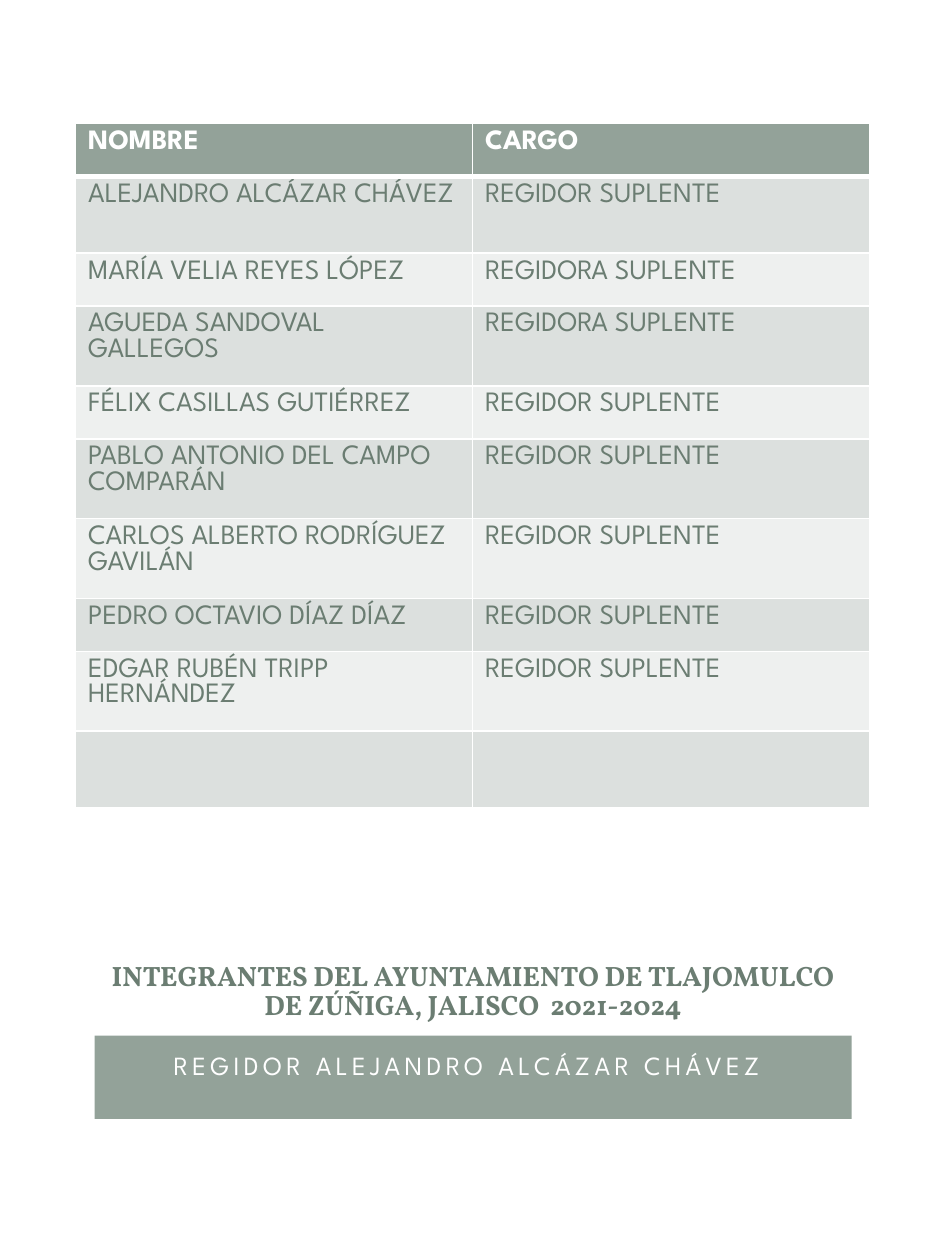
from dataclasses import dataclass

from lxml.etree import SubElement
from pptx import Presentation
from pptx.dml.color import RGBColor
from pptx.enum.shapes import MSO_SHAPE
from pptx.enum.text import MSO_ANCHOR, PP_ALIGN
from pptx.oxml.ns import qn
from pptx.util import Inches, Pt

WHITE = RGBColor(0xFF, 0xFF, 0xFF)
SAGE = RGBColor(0x93, 0xA2, 0x99)
DARK_SAGE = RGBColor(0x6B, 0x7D, 0x72)
BANDS = (RGBColor(0xDC, 0xE0, 0xDE), RGBColor(0xEE, 0xF0, 0xEF))
SANS = "League Spartan"
SERIF = "Vollkorn"


@dataclass
class Member:
    name: str
    role: str
    height: float


MEMBERS = [
    Member("ALEJANDRO ALCÁZAR CHÁVEZ", "REGIDOR SUPLENTE", 0.61),
    Member("MARÍA VELIA REYES LÓPEZ", "REGIDORA SUPLENTE", 0.42),
    Member("AGUEDA SANDOVAL GALLEGOS", "REGIDORA SUPLENTE", 0.61),
    Member("FÉLIX CASILLAS GUTIÉRREZ", "REGIDOR SUPLENTE", 0.42),
    Member("PABLO ANTONIO DEL CAMPO COMPARÁN", "REGIDOR SUPLENTE", 0.61),
    Member("CARLOS ALBERTO RODRÍGUEZ GAVILÁN", "REGIDOR SUPLENTE", 0.42),
    Member("PEDRO OCTAVIO DÍAZ DÍAZ", "REGIDOR SUPLENTE", 0.42),
    Member("EDGAR RUBÉN TRIPP HERNÁNDEZ", "REGIDOR SUPLENTE", 0.61),
    Member("", "", 0.61),
]


def style(para, face: str, size: float, color: RGBColor, bold: bool = False) -> None:
    font = para.font
    font.name, font.size, font.bold = face, Pt(size), bold
    font.color.rgb = color


def add_borders(cell, bottom: float, top: float) -> None:
    properties = cell._tc.get_or_add_tcPr()
    widths = {"a:lnL": 1, "a:lnR": 1, "a:lnT": top, "a:lnB": bottom}
    for index, (tag, width) in enumerate(widths.items()):
        line = properties.makeelement(qn(tag), {"w": str(Pt(width))})
        properties.insert(index, line)
        fill = SubElement(line, qn("a:solidFill"))
        SubElement(fill, qn("a:srgbClr"), val=str(WHITE))


def add_member_table(page, members: list[Member]) -> None:
    rows = [Member("NOMBRE", "CARGO", 0.42), *members]
    frame = page.shapes.add_table(
        len(rows), 2, Inches(0.6), Inches(0.98), Inches(6.3),
        Inches(sum(row.height for row in rows)),
    )
    table = frame.table
    for column in table.columns:
        column.width = Inches(3.15)
    for index, member in enumerate(rows):
        table.rows[index].height = Inches(member.height)
        header = index == 0
        for cell, text in zip(table.rows[index].cells, (member.name, member.role)):
            cell.text = text
            style(cell.text_frame.paragraphs[0], SANS, 16,
                  WHITE if header else DARK_SAGE, header)
            cell.fill.solid()
            cell.fill.fore_color.rgb = SAGE if header else BANDS[(index - 1) % 2]
            add_borders(cell, bottom=3 if header else 1, top=3 if index == 1 else 1)


def add_title(page, text: str) -> None:
    box = page.shapes.add_textbox(Inches(0.75), Inches(7.44), Inches(6.01), Inches(0.76))
    frame = box.text_frame
    frame.word_wrap = True
    frame.vertical_anchor = MSO_ANCHOR.MIDDLE
    frame.margin_top = Inches(0.16)
    para = frame.paragraphs[0]
    para.text = text
    para.alignment = PP_ALIGN.CENTER
    para.line_spacing = 0.87
    style(para, SERIF, 16, DARK_SAGE, True)


def add_banner(page, text: str) -> None:
    banner = page.shapes.add_shape(
        MSO_SHAPE.RECTANGLE, Inches(0.75), Inches(8.22), Inches(6.01), Inches(0.66)
    )
    banner.shadow.inherit = False
    banner.fill.solid()
    banner.fill.fore_color.rgb = SAGE
    banner.line.fill.background()
    box = page.shapes.add_textbox(Inches(0.78), Inches(8.25), Inches(5.94), Inches(0.59))
    frame = box.text_frame
    frame.word_wrap = True
    frame.vertical_anchor = MSO_ANCHOR.TOP
    frame.margin_top = Inches(0.08)
    para = frame.paragraphs[0]
    span = para.add_run()
    span.text = text
    span.font._element.set("spc", "250")
    para.alignment = PP_ALIGN.CENTER
    style(para, SANS, 15, WHITE)


def main() -> None:
    deck = Presentation()
    deck.slide_width, deck.slide_height = Inches(7.5), Inches(10)
    page = deck.slides.add_slide(deck.slide_layouts[6])
    add_banner(page, "REGIDOR ALEJANDRO ALCÁZAR CHÁVEZ ")
    add_title(page, "INTEGRANTES DEL AYUNTAMIENTO DE TLAJOMULCO DE ZÚÑIGA, JALISCO  2021-2024")
    add_member_table(page, MEMBERS)
    deck.save("out.pptx")


if __name__ == "__main__":
    main()
